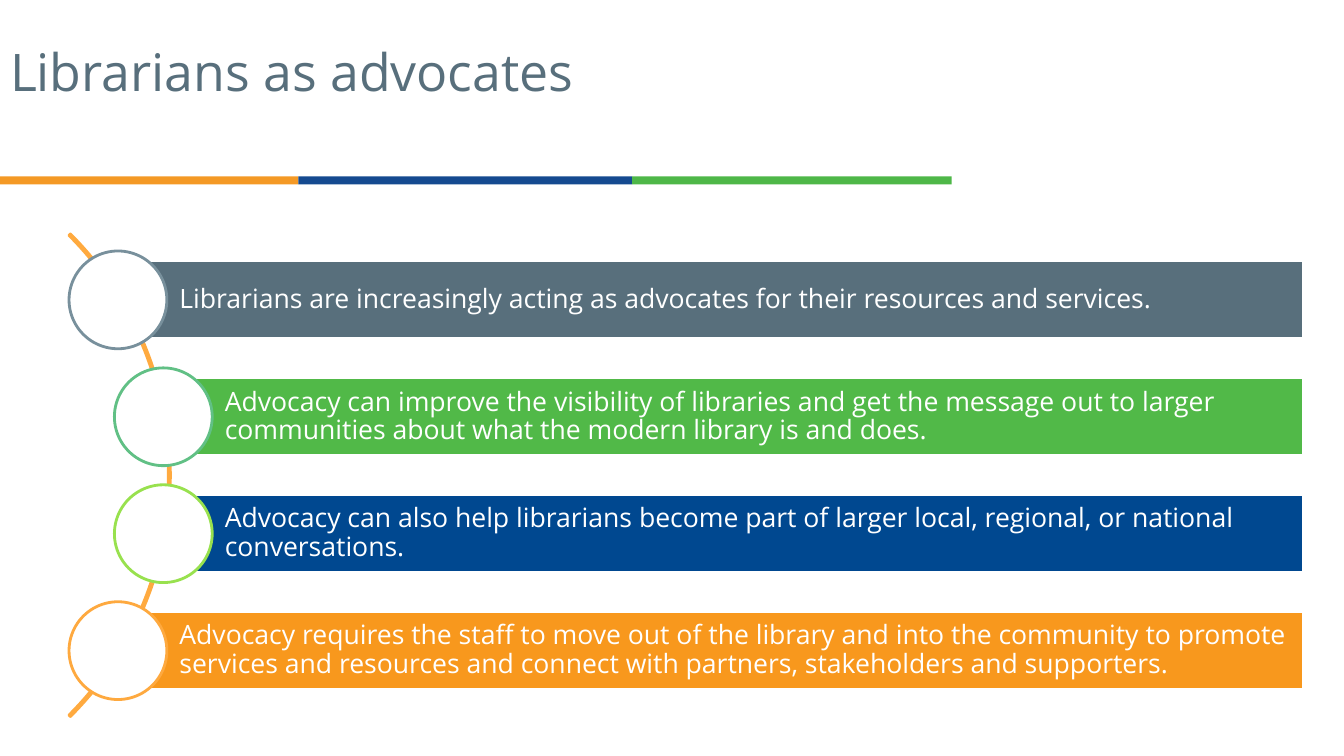
from pptx import Presentation
from pptx import util as u
from pptx.dml.color import RGBColor
from pptx.enum import shapes, text

WHITE = RGBColor(0xFF, 0xFF, 0xFF)
SLATE = RGBColor(0x58, 0x6F, 0x7C)
GREEN = RGBColor(0x51, 0xB9, 0x48)
BLUE = RGBColor(0x00, 0x48, 0x90)
ORANGE = RGBColor(0xF8, 0x98, 0x1D)
ARC_ORANGE = RGBColor(0xFF, 0xAA, 0x3F)
RING_SLATE = RGBColor(0x78, 0x90, 0x9C)
RING_GREEN = RGBColor(0x61, 0xC0, 0x85)
RING_LIME = RGBColor(0x98, 0xE1, 0x4E)
RING_ORANGE = RGBColor(0xFE, 0xA9, 0x3F)
STRIPE_ORANGE = RGBColor(0xF4, 0x99, 0x25)
STRIPE_BLUE = RGBColor(0x15, 0x4A, 0x90)
STRIPE_GREEN = RGBColor(0x4E, 0xB7, 0x48)

# Content
TITLE = "Librarians as advocates"
STRIPES = [(2.96, STRIPE_ORANGE), (3.31, STRIPE_BLUE), (3.17, STRIPE_GREEN)]
# Text, bar left, bar colour, ring colour
POINTS = [
    ("Librarians are increasingly acting as advocates for their resources and services.",
     1.17, SLATE, RING_SLATE),
    ("Advocacy can improve the visibility of libraries and get the message out to larger "
     "communities about what the modern library is and does.",
     1.62, GREEN, RING_GREEN),
    ("Advocacy can also help librarians become part of larger local, regional, or national "
     "conversations.",
     1.62, BLUE, RING_LIME),
    ("Advocacy requires the staff to move out of the library and into the community to promote "
     "services and resources and connect with partners, stakeholders and supporters.",
     1.17, ORANGE, RING_ORANGE),
]

# Layout in inches
BAR_TOP, BAR_STEP, BAR_HEIGHT, BAR_RIGHT = 2.59, 1.16, 0.77, 12.93
CIRCLE = 0.97
ARC_LEFT, ARC_TOP, ARC_SIZE = -5.08, 1.33, 6.77


def add_box(page, kind, left, top, width, height, fill=None, line=None):
    box = page.shapes.add_shape(kind, *map(u.Inches, (left, top, width, height)))
    box.shadow.inherit = False
    if fill is None:
        box.fill.background()
    else:
        box.fill.solid()
        box.fill.fore_color.rgb = fill
    if line is None:
        box.line.fill.background()
    else:
        box.line.color.rgb = line
        box.line.width = u.Pt(2)
    return box


def write(box, words, size, color, anchor, insets):
    frame = box.text_frame
    frame.word_wrap = True
    frame.auto_size = text.MSO_AUTO_SIZE.NONE
    frame.vertical_anchor = anchor
    (frame.margin_left, frame.margin_top,
     frame.margin_right, frame.margin_bottom) = map(u.Inches, insets)
    para = frame.paragraphs[0]
    para.alignment = text.PP_ALIGN.LEFT
    para.line_spacing = 0.9
    span = para.add_run()
    span.text = words
    span.font.name = "Open Sans"
    span.font.size = u.Pt(size)
    span.font.color.rgb = color


def main():
    deck = Presentation()
    deck.slide_width, deck.slide_height = u.Inches(13.33), u.Inches(7.5)
    page = deck.slides.add_slide(deck.slide_layouts[5])
    preset = shapes.MSO_SHAPE

    # Title
    title = page.shapes.title
    title.left, title.top = u.Inches(0), u.Inches(0.41)
    title.width, title.height = u.Inches(8.43), u.Inches(1.18)
    write(title, TITLE, size=37, color=SLATE, anchor=text.MSO_ANCHOR.TOP,
          insets=(0.1, 0.05, 0.1, 0.05))

    # Three-colour stripe
    left = 0
    for width, color in STRIPES:
        add_box(page, preset.RECTANGLE, left, 1.75, width, 0.08, fill=color)
        left += width

    # Arc behind the circles
    arc = add_box(page, preset.BLOCK_ARC, ARC_LEFT, ARC_TOP, ARC_SIZE, ARC_SIZE,
                  line=ARC_ORANGE)
    for index, value in enumerate((189, 27, 0.003)):
        arc.adjustments[index] = value

    # Bars, each with a circle centred on its left edge
    for row, (words, left, color, ring) in enumerate(POINTS):
        top = BAR_TOP + row * BAR_STEP
        bar = add_box(page, preset.RECTANGLE, left, top, BAR_RIGHT - left, BAR_HEIGHT,
                      fill=color, line=WHITE)
        write(bar, words, size=19, color=WHITE, anchor=text.MSO_ANCHOR.MIDDLE,
              insets=(0.61, 0.05, 0.05, 0.05))
        add_box(page, preset.OVAL, left - CIRCLE / 2, top + (BAR_HEIGHT - CIRCLE) / 2,
                CIRCLE, CIRCLE, fill=WHITE, line=ring)

    deck.save("out.pptx")


if __name__ == "__main__":
    main()
